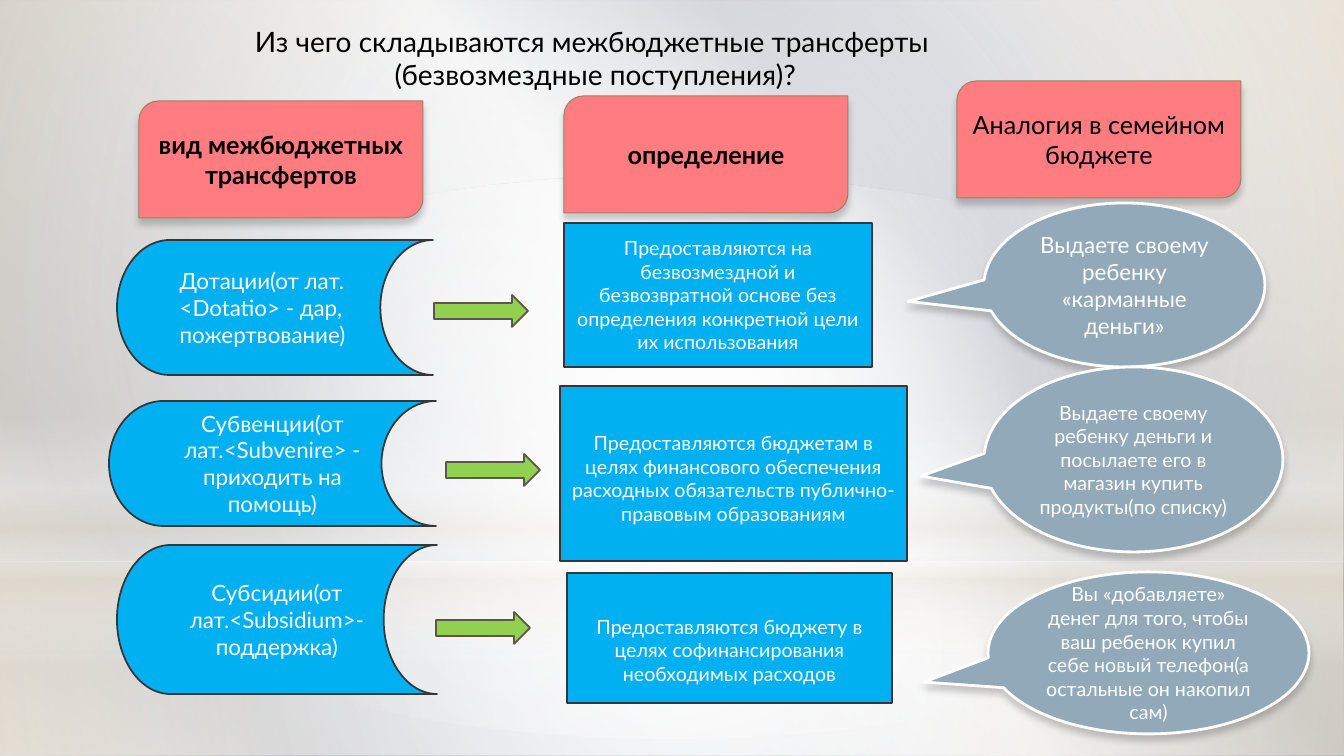
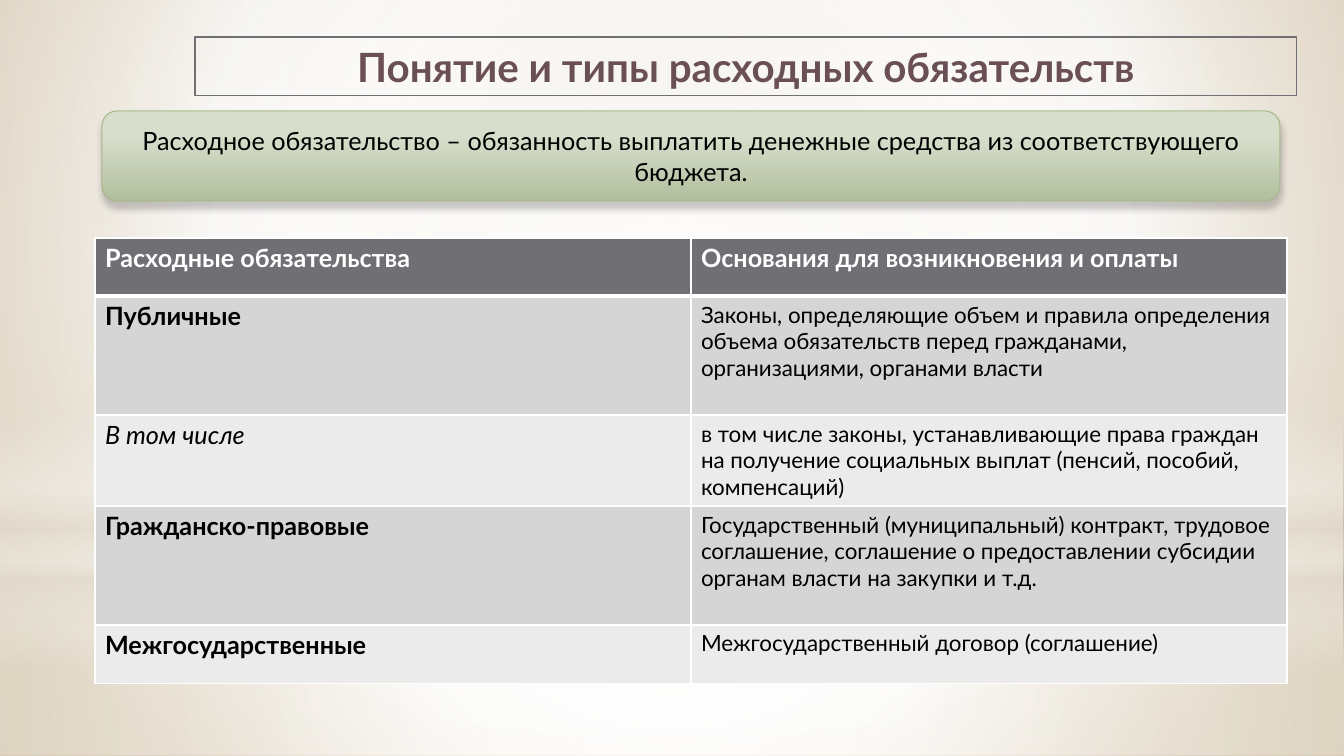
from lxml import etree
from pptx import Presentation
from pptx.dml.color import RGBColor
from pptx.enum.shapes import MSO_SHAPE
from pptx.enum.text import MSO_ANCHOR, MSO_AUTO_SIZE, PP_ALIGN
from pptx.oxml import parse_xml
from pptx.oxml.ns import nsdecls, qn
from pptx.util import Pt

RECTANGLE = MSO_SHAPE.RECTANGLE
ELLIPSE = MSO_SHAPE.OVAL
ROUNDED = MSO_SHAPE.ROUNDED_RECTANGLE
HEADING = MSO_SHAPE.ROUND_2_DIAG_RECTANGLE
STORAGE = MSO_SHAPE.FLOWCHART_STORED_DATA
ARROW = MSO_SHAPE.RIGHT_ARROW
CALLOUT = MSO_SHAPE.OVAL_CALLOUT
CENTER, LEFT = PP_ALIGN.CENTER, PP_ALIGN.LEFT
TOP, MIDDLE = MSO_ANCHOR.TOP, MSO_ANCHOR.MIDDLE
NO_AUTOFIT = MSO_AUTO_SIZE.NONE

PX = 12192000 / 1344
FONT = "Lato"
BLACK, WHITE, SAND = "000000", "FFFFFF", "E3DCCF"
BLUE, DARK, GRAY = "00B0F0", "363639", "6F6F74"
rgb = RGBColor.from_string


def paint_gradient(fill, holder, stops, angle=None, focus=(50, 50, 50, 50)):
    """Stops are (position, colour, opacity) in percent; without an angle the gradient is radial."""
    fill.gradient()
    marks = "".join(
        f'<a:gs pos="{position * 1000}"><a:srgbClr val="{color}">'
        f'<a:alpha val="{opacity * 1000}"/></a:srgbClr></a:gs>'
        for position, color, opacity in stops)
    if angle is None:
        left, top, right, bottom = [value * 1000 for value in focus]
        course = (f'<a:path path="circle"><a:fillToRect l="{left}" t="{top}" '
                  f'r="{right}" b="{bottom}"/></a:path>')
    else:
        course = f'<a:lin ang="{angle * 60000}" scaled="0"/>'
    gradient = parse_xml(f'<a:gradFill {nsdecls("a")} rotWithShape="1">'
                         f'<a:gsLst>{marks}</a:gsLst>{course}</a:gradFill>')
    holder.replace(holder.find(qn("a:gradFill")), gradient)


def add_box(page, kind, rect, fill=None, line=None, width=1.25, text="", size=18,
            color=WHITE, bold=False, align=CENTER, shadow=False):
    box = page.shapes.add_shape(kind, *[round(value * PX) for value in rect])
    box.shadow.inherit = False
    if fill:
        box.fill.solid()
        box.fill.fore_color.rgb = rgb(fill)
    if line:
        box.line.color.rgb = rgb(line)
        box.line.width = Pt(width)
    else:
        box.line.fill.background()
    if shadow:
        effects = box.element.spPr.find(qn("a:effectLst"))
        effects.append(parse_xml(
            f'<a:outerShdw {nsdecls("a")} blurRad="63500" dist="50800" dir="5400000" '
            'algn="t" rotWithShape="0"><a:srgbClr val="000000"><a:alpha val="20000"/>'
            '</a:srgbClr></a:outerShdw>'))
    if text:
        box.text_frame.word_wrap = True
        box.text_frame.vertical_anchor = MIDDLE
        para = box.text_frame.paragraphs[0]
        para.alignment = align
        span = para.add_run()
        span.text = text
        span.font.name = FONT
        span.font.size = Pt(size)
        span.font.bold = bold
        span.font.color.rgb = rgb(color)
    return box


deck = Presentation()
deck.slide_width = round(1344 * PX)
deck.slide_height = round(756 * PX)

# Pages with their titles and backgrounds
title_specs = [
    ((133, 19, 925, 78), 20, BLACK, False,
     ["Из чего складываются межбюджетные трансферты ", "(безвозмездные поступления)?"]),
    ((195, 37, 1102, 59), 28.8, "6A4F57", True, ["Понятие и типы расходных обязательств"]),
]
pages = []
for rect, size, color, bold, lines in title_specs:
    page = deck.slides.add_slide(deck.slide_layouts[5])
    pages.append(page)
    title = page.shapes.title
    title.left, title.top, title.width, title.height = [round(value * PX) for value in rect]
    frame = title.text_frame
    frame.word_wrap = True
    frame.auto_size = NO_AUTOFIT
    frame.vertical_anchor = TOP
    for index, line in enumerate(lines):
        para = frame.add_paragraph() if index else frame.paragraphs[0]
        para.alignment = CENTER
        span = para.add_run()
        span.text = line
        span.font.name = FONT
        span.font.size = Pt(size)
        span.font.bold = bold
        span.font.color.rgb = rgb(color)
transfers, obligations = pages
obligations.shapes.title.line.color.rgb = rgb(GRAY)
obligations.shapes.title.line.width = Pt(0.75)

paint_gradient(transfers.background.fill, transfers.element.cSld.bg.bgPr,
               [(0, WHITE, 100), (7, "E6E6E6", 100), (32, "7D8496", 100),
                (47, "E6E6E6", 100), (85, "7D8496", 100), (100, "E6E6E6", 100)], angle=140)
paint_gradient(obligations.background.fill, obligations.element.cSld.bg.bgPr,
               [(0, "DFD5C1", 100), (60, WHITE, 100), (100, "CCB791", 100)],
               focus=(20, 10, 20, 60))

# Soft light shared by all pages, placed on the master
lights = [
    (RECTANGLE, (0, 562, 1344, 194), None,
     [(0, WHITE, 91), (37, WHITE, 76), (100, SAND, 79)]),
    (RECTANGLE, (0, 0, 1344, 562), None,
     [(0, WHITE, 89), (48, WHITE, 62), (100, SAND, 79)]),
    (RECTANGLE, (0, 415, 1344, 252), 90,
     [(0, WHITE, 0), (29, WHITE, 30), (45, SAND, 40),
      (55, WHITE, 26), (65, SAND, 60), (100, WHITE, 0)]),
    (ELLIPSE, (0, 176, 1344, 562), None, [(0, WHITE, 100), (56, WHITE, 0)]),
]
master_tree = deck.slide_master.element.cSld.spTree
for index, (kind, rect, angle, stops) in enumerate(lights):
    light = add_box(transfers, kind, rect)
    paint_gradient(light.fill, light.element.spPr, stops, angle)
    light.element.nvSpPr.cNvPr.set("id", str(101 + index))
    master_tree.insert(2 + index, light.element)

# Slide 1: kinds of transfers, definitions and family examples
headings = [
    (139, 101, "вид межбюджетных трансфертов", True),
    (564, 96, "определение", True),
    (957, 81, "Аналогия в семейном бюджете", False),
]
for left, top, text, bold in headings:
    add_box(transfers, HEADING, (left, top, 284, 117), "FF7C80", "9C8265", 0.75,
            text, color=BLACK, bold=bold, shadow=True)

transfer_kinds = [
    ((117, 240, 316, 135), LEFT, "Дотации(от лат. <Dotatio> - дар, пожертвование)"),
    ((109, 401, 327, 125), CENTER, "Субвенции(от лат.<Subvenire> - приходить на помощь)"),
    ((117, 545, 320, 149), CENTER, "Субсидии(от лат.<Subsidium>-поддержка)"),
]
for rect, align, text in transfer_kinds:
    add_box(transfers, STORAGE, rect, BLUE, DARK, text=text, size=16, align=align)

for left, top in [(434, 295), (446, 454), (436, 612)]:
    add_box(transfers, ARROW, (left, top, 94, 32), "92D050", "605648")

definitions = [
    ((564, 223, 308, 144), 5, "Предоставляются на безвозмездной и безвозвратной основе "
     "без определения конкретной цели их использования"),
    ((560, 386, 347, 175), 14, "Предоставляются бюджетам в целях финансового обеспечения "
     "расходных обязательств публично-правовым образованиям"),
    ((567, 573, 325, 130), 29, "Предоставляются бюджету в целях софинансирования "
     "необходимых расходов"),
]
for rect, inset, text in definitions:
    box = add_box(transfers, RECTANGLE, rect, BLUE, DARK, text=text, size=14)
    box.text_frame.margin_top = round(inset * PX)

examples = [
    ((984, 203, 281, 164), (-0.77, 0.1), 16, "Выдаете своему ребенку «карманные деньги»"),
    ((984, 367, 299, 185), (-0.71, 0.09), 14, "Выдаете своему ребенку деньги и посылаете "
     "его в магазин купить продукты(по списку)"),
    ((988, 572, 321, 162), (-0.7, 0.18), 14, "Вы «добавляете» денег для того, чтобы ваш "
     "ребенок купил себе новый телефон(а остальные он накопил сам)"),
]
for rect, (tip_x, tip_y), size, text in examples:
    bubble = add_box(transfers, CALLOUT, rect, "92A9B9", WHITE, 2, text, size, shadow=True)
    bubble.adjustments[0] = tip_x
    bubble.adjustments[1] = tip_y

# Slide 2: table of obligations and the definition above it
rows = [
    (58, GRAY, "Расходные обязательства", "Основания для возникновения и оплаты"),
    (119, "D5D5D6", "Публичные", "Законы, определяющие объем и правила определения "
     "объема обязательств перед гражданами, организациями, органами власти"),
    (91, "EBEBEB", "В том числе", "в том числе законы, устанавливающие права граждан "
     "на получение социальных выплат (пенсий, пособий, компенсаций)"),
    (119, "D5D5D6", "Гражданско-правовые", "Государственный (муниципальный) контракт, "
     "трудовое соглашение, соглашение о предоставлении субсидии органам власти "
     "на закупки и т.д."),
    (59, "EBEBEB", "Межгосударственные", "Межгосударственный договор (соглашение)"),
]
SUBTYPE_ROW = 2
table_rect = (95, 238, 1192, sum(row[0] for row in rows))
table = obligations.shapes.add_table(
    len(rows), 2, *[round(value * PX) for value in table_rect]).table
for column in table.columns:
    column.width = round(596 * PX)
for row_index, (height, fill, *texts) in enumerate(rows):
    table.rows[row_index].height = round(height * PX)
    header = row_index == 0
    for column_index, text in enumerate(texts):
        cell = table.cell(row_index, column_index)
        cell.fill.solid()
        cell.fill.fore_color.rgb = rgb(fill)
        label = column_index == 0
        span = cell.text_frame.paragraphs[0].add_run()
        span.text = text
        span.font.name = FONT
        span.font.size = Pt(18 if header or label else 16)
        span.font.bold = header or (label and row_index != SUBTYPE_ROW)
        span.font.italic = label and row_index == SUBTYPE_ROW
        span.font.color.rgb = rgb(WHITE if header else BLACK)
        properties = cell.fill and cell.text_frame and cell._tc.get_or_add_tcPr()
        widths = {"L": 1, "R": 1, "T": 3 if row_index == 1 else 1, "B": 3 if header else 1}
        for position, (side, width) in enumerate(widths.items()):
            border = etree.Element(qn(f"a:ln{side}"), w=str(Pt(width)))
            paint = etree.SubElement(border, qn("a:solidFill"))
            etree.SubElement(paint, qn("a:srgbClr"), val=WHITE)
            properties.insert(position, border)

definition = add_box(obligations, ROUNDED, (102, 111, 1178, 90), line="A7B789", width=0.75,
                     text="Расходное обязательство – обязанность выплатить денежные "
                     "средства из соответствующего бюджета.", color=BLACK, shadow=True)
paint_gradient(definition.fill, definition.element.spPr,
               [(28, "D7DECB", 100), (100, "B2BE9F", 100)], angle=90)

deck.save("out.pptx")
